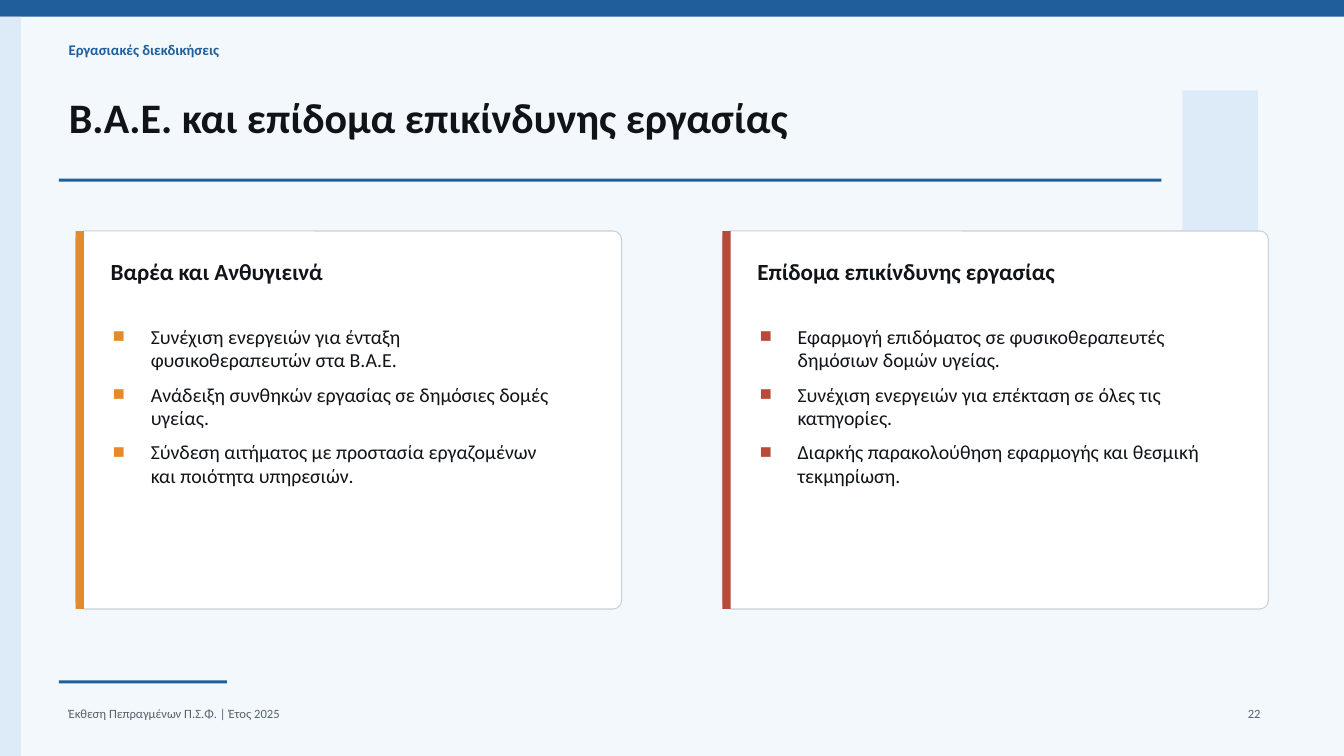
from dataclasses import dataclass

from lxml.etree import SubElement
from pptx import Presentation
from pptx.dml.color import RGBColor
from pptx.enum.shapes import MSO_SHAPE
from pptx.enum.text import MSO_ANCHOR, MSO_AUTO_SIZE, PP_ALIGN
from pptx.oxml.ns import qn
from pptx.util import Pt

SECTION = "Εργασιακές διεκδικήσεις"
TITLE = "Β.Α.Ε. και επίδομα επικίνδυνης εργασίας"
FOOTER = "Έκθεση Πεπραγμένων Π.Σ.Φ. | Έτος 2025"
PAGE_NUMBER = "22"
CARDS = [
    ("Βαρέα και Ανθυγιεινά", "E58A2A", [
        "Συνέχιση ενεργειών για ένταξη φυσικοθεραπευτών στα Β.Α.Ε.",
        "Ανάδειξη συνθηκών εργασίας σε δημόσιες δομές υγείας.",
        "Σύνδεση αιτήματος με προστασία εργαζομένων και ποιότητα υπηρεσιών.",
    ]),
    ("Επίδομα επικίνδυνης εργασίας", "B84A3A", [
        "Εφαρμογή επιδόματος σε φυσικοθεραπευτές δημόσιων δομών υγείας.",
        "Συνέχιση ενεργειών για επέκταση σε όλες τις κατηγορίες.",
        "Διαρκής παρακολούθηση εφαρμογής και θεσμική τεκμηρίωση.",
    ]),
]


@dataclass(frozen=True)
class Theme:
    font: str = "Calibri"
    background: str = "F3F8FD"
    primary: str = "1F5E99"
    pale: str = "DCEBF7"
    card: str = "FFFFFF"
    border: str = "C8D0D8"
    ink: str = "101418"
    muted: str = "56606B"
    section_size: float = 10.5
    title_size: float = 30
    heading_size: float = 16.5
    body_size: float = 14.2
    footer_size: float = 9


THEME = Theme()
PX = 9525  # EMU per px, 96 px to the inch
SLIDE_W, SLIDE_H = 1280, 720
MARGIN = 56
TOP_BAR_H = 16
CARD_X, CARD_Y, CARD_W, CARD_H = 72, 220, 520, 360
CARD_PITCH = 616
CARD_RADIUS = 8
ACCENT_W = 8
RULE_H = 3
BULLET_INDENT = 36
ITEM_GAP = 7.3


def color(code):
    return RGBColor.from_string(code)


def add_block(slide, box, fill, preset=MSO_SHAPE.RECTANGLE, border=None):
    block = slide.shapes.add_shape(preset, *(v * PX for v in box))
    block.shadow.inherit = False
    block.fill.solid()
    block.fill.fore_color.rgb = color(fill)
    if border:
        block.line.color.rgb = color(border)
        block.line.width = Pt(0.75)
    else:
        block.line.fill.background()
    return block


def place(holder, box):
    """Move a text holder to box, bring it to the front and reset its frame."""
    holder.left, holder.top, holder.width, holder.height = (v * PX for v in box)
    holder.element.getparent().append(holder.element)
    frame = holder.text_frame
    frame.word_wrap = True
    frame.auto_size = MSO_AUTO_SIZE.NONE
    frame.vertical_anchor = MSO_ANCHOR.TOP
    return frame


def write(paragraph, text, size, ink, bold=False, align=PP_ALIGN.LEFT):
    paragraph.alignment = align
    paragraph.line_spacing = 1.0
    run = paragraph.add_run()
    run.text = text
    run.font.name = THEME.font
    run.font.size = Pt(size)
    run.font.bold = bold
    run.font.color.rgb = color(ink)


def add_label(slide, box, text, size, ink, bold=False, align=PP_ALIGN.LEFT):
    frame = place(slide.shapes.add_textbox(0, 0, 0, 0), box)
    write(frame.paragraphs[0], text, size, ink, bold, align)


def set_square_bullet(paragraph, accent):
    props = paragraph._p.get_or_add_pPr()
    props.set("marL", str(BULLET_INDENT * PX))
    props.set("indent", str(-BULLET_INDENT * PX))
    SubElement(SubElement(props, qn("a:buClr")), qn("a:srgbClr")).set("val", accent)
    SubElement(props, qn("a:buFont")).set("typeface", "Arial")
    SubElement(props, qn("a:buChar")).set("char", "■")


def add_card(slide, x, heading, accent, items, body):
    panel = add_block(slide, (x, CARD_Y, CARD_W, CARD_H), THEME.card,
                      MSO_SHAPE.ROUNDED_RECTANGLE, THEME.border)
    panel.adjustments[0] = CARD_RADIUS / CARD_H
    add_block(slide, (x, CARD_Y, ACCENT_W, CARD_H), accent)
    add_label(slide, (x + 24, CARD_Y + 20, CARD_W - 48, 48),
              heading, THEME.heading_size, THEME.ink, bold=True)
    frame = place(body, (x + 26, CARD_Y + 84, 440, 164))
    for i, item in enumerate(items):
        paragraph = frame.paragraphs[0] if i == 0 else frame.add_paragraph()
        set_square_bullet(paragraph, accent)
        paragraph.space_before = Pt(ITEM_GAP if i else 0)
        write(paragraph, item, THEME.body_size, THEME.ink)


def main():
    deck = Presentation()
    deck.slide_width, deck.slide_height = SLIDE_W * PX, SLIDE_H * PX
    two_content = deck.slide_layouts[3]
    slide = deck.slides.add_slide(two_content)
    slide.background.fill.solid()
    slide.background.fill.fore_color.rgb = color(THEME.background)
    title, *bodies = slide.placeholders

    add_block(slide, (0, 0, SLIDE_W, TOP_BAR_H), THEME.primary)
    add_block(slide, (0, TOP_BAR_H, 20, SLIDE_H - TOP_BAR_H), THEME.pale)
    add_block(slide, (1126, 86, 72, 490), THEME.pale)

    add_label(slide, (MARGIN, 34, 700, 28), SECTION,
              THEME.section_size, THEME.primary, bold=True)
    title_frame = place(title, (MARGIN, 82, 1120, 82))
    write(title_frame.paragraphs[0], TITLE, THEME.title_size, THEME.ink, bold=True)
    add_block(slide, (MARGIN, 170, 1050, RULE_H), THEME.primary)

    for i, (card, body) in enumerate(zip(CARDS, bodies)):
        add_card(slide, CARD_X + i * CARD_PITCH, *card, body)

    add_block(slide, (MARGIN, 648, 160, RULE_H), THEME.primary)
    add_label(slide, (MARGIN, 668, 680, 24), FOOTER, THEME.footer_size, THEME.muted)
    add_label(slide, (1150, 668, 60, 24), PAGE_NUMBER,
              THEME.footer_size, THEME.muted, align=PP_ALIGN.RIGHT)

    deck.save("out.pptx")


if __name__ == "__main__":
    main()
